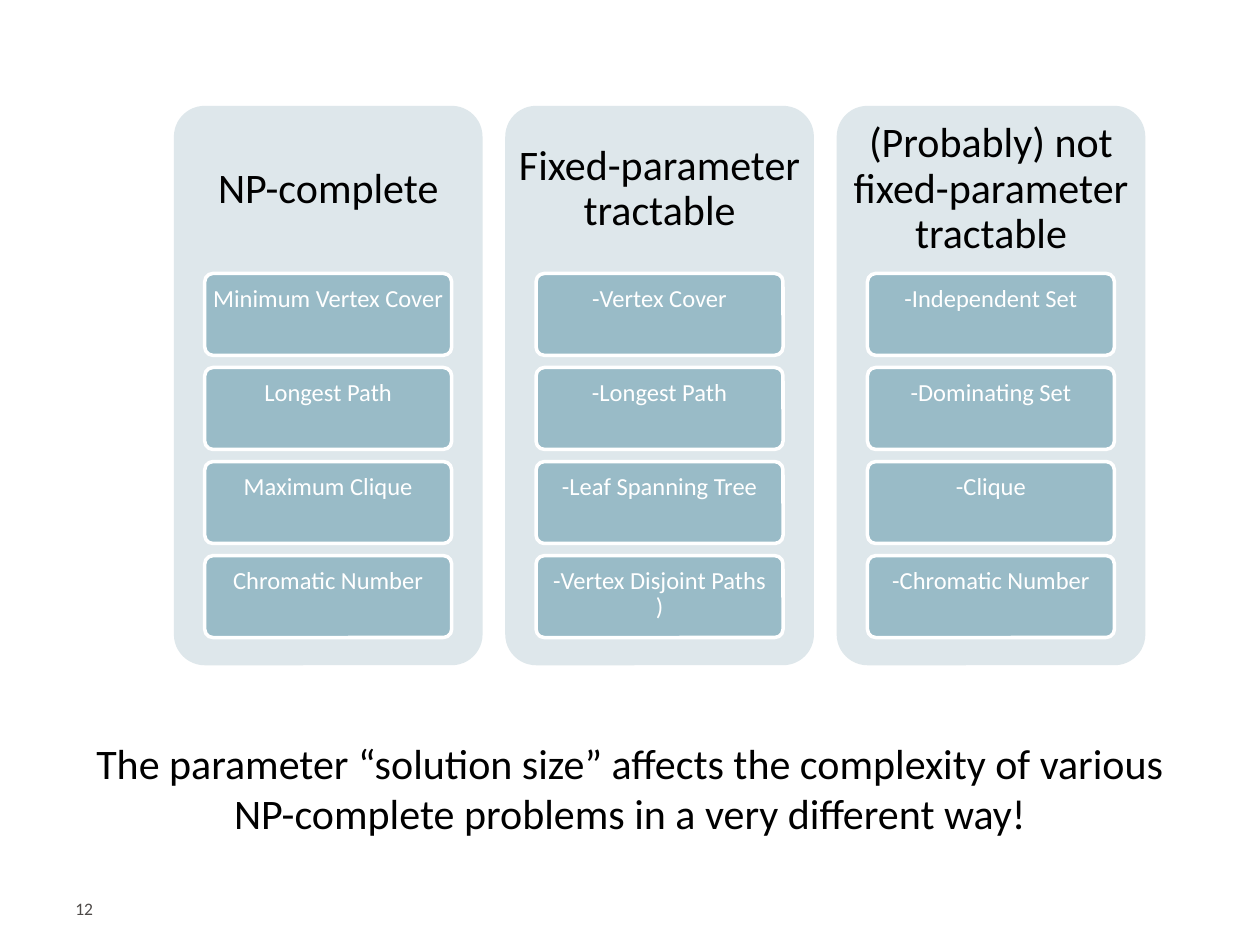
"""Build the slide on how solution size affects NP-complete problems."""
from dataclasses import dataclass
from typing import Any

from pptx import Presentation
from pptx import util as u
from pptx.dml.color import RGBColor
from pptx.enum import shapes, text

BLACK = RGBColor(0x00, 0x00, 0x00)
WHITE = RGBColor(0xFF, 0xFF, 0xFF)
GREY = RGBColor(0x4E, 0x4A, 0x48)
PALE = RGBColor(0xDE, 0xE7, 0xEB)
TEAL = RGBColor(0x99, 0xBB, 0xC7)

GROUPS = {
    "NP-complete": [
        "Minimum Vertex Cover", "Longest Path", "Maximum Clique", "Chromatic Number"],
    "Fixed-parameter tractable": [
        "-Vertex Cover", "-Longest Path", "-Leaf Spanning Tree", "-Vertex Disjoint Paths\v)"],
    "(Probably) not fixed-parameter tractable": [
        "-Independent Set", "-Dominating Set", "-Clique", "-Chromatic Number"],
}
CLAIM = ("The parameter “solution size” affects the complexity of various "
         "NP-complete problems in a very different way!")

LEFT, TOP, WIDE, HIGH, STEP = 1.38, 0.84, 2.45, 4.44, 2.63
HEAD = 1.33
CELL_W, CELL_H = 1.96, 0.65
ROW = (4.41 - 2.17) / 3
INSET = (WIDE - CELL_W) / 2


@dataclass
class Deck:
    slide: Any
    font: str = "Calibri"

    def letter(self, shape, words, size, color, pads, mid=False, center=True, lead=None):
        frame = shape.text_frame
        sides = ("margin_left", "margin_top", "margin_right", "margin_bottom")
        form = dict(zip(sides, map(u.Inches, pads)))
        form["word_wrap"] = True
        form["vertical_anchor"] = text.MSO_ANCHOR.MIDDLE if mid else text.MSO_ANCHOR.TOP
        for name, value in form.items():
            setattr(frame, name, value)
        para = frame.paragraphs[0]
        para.text = words
        para.alignment = text.PP_ALIGN.CENTER if center else text.PP_ALIGN.LEFT
        if lead:
            para.line_spacing = lead
        for run in para.runs:
            for name, value in {"name": self.font, "size": u.Pt(size)}.items():
                setattr(run.font, name, value)
            run.font.color.rgb = color

    def label(self, box, words, size, color, pads, **form):
        shape = self.slide.shapes.add_textbox(*map(u.Inches, box))
        self.letter(shape, words, size, color, pads, **form)

    def panel(self, box, fill, line=None):
        shape = self.slide.shapes.add_shape(
            shapes.MSO_SHAPE.ROUNDED_RECTANGLE, *map(u.Inches, box))
        shape.adjustments[0] = 0.1
        shape.shadow.inherit = False
        shape.fill.solid()
        shape.fill.fore_color.rgb = fill
        if line:
            shape.line.color.rgb = line
            shape.line.width = u.Pt(2)
        else:
            shape.line.fill.background()
        return shape

    def cell(self, box, words):
        shape = self.panel(box, TEAL, WHITE)
        self.letter(shape, words, 14, WHITE, (0.03, 0.08, 0.03, 0.03), lead=0.9)

    def column(self, left, title, items):
        self.panel((left, TOP, WIDE, HIGH), PALE)
        self.label((left, TOP, WIDE, HEAD), title, 24, BLACK, [0.1] * 4, mid=True, lead=0.9)
        for row, item in enumerate(items):
            self.cell((left + INSET, TOP + HEAD + row * ROW, CELL_W, CELL_H), item)


def main():
    prs = Presentation()
    prs.slide_width, prs.slide_height = u.Inches(10), u.Inches(7.5)
    deck = Deck(prs.slides.add_slide(prs.slide_layouts[6]))
    deck.label((0.5, 5.8, 9, 1.42), CLAIM, 24, BLACK, (0.1, 0.05, 0.1, 0.05))
    deck.label((0.5, 7.13, 2.14, 0.3), "12", 10, GREY, (0.1, 0, 0.1, 0.05), center=False)
    for index, (title, items) in enumerate(GROUPS.items()):
        deck.column(LEFT + index * STEP, title, items)
    prs.save("out.pptx")


if __name__ == "__main__":
    main()
